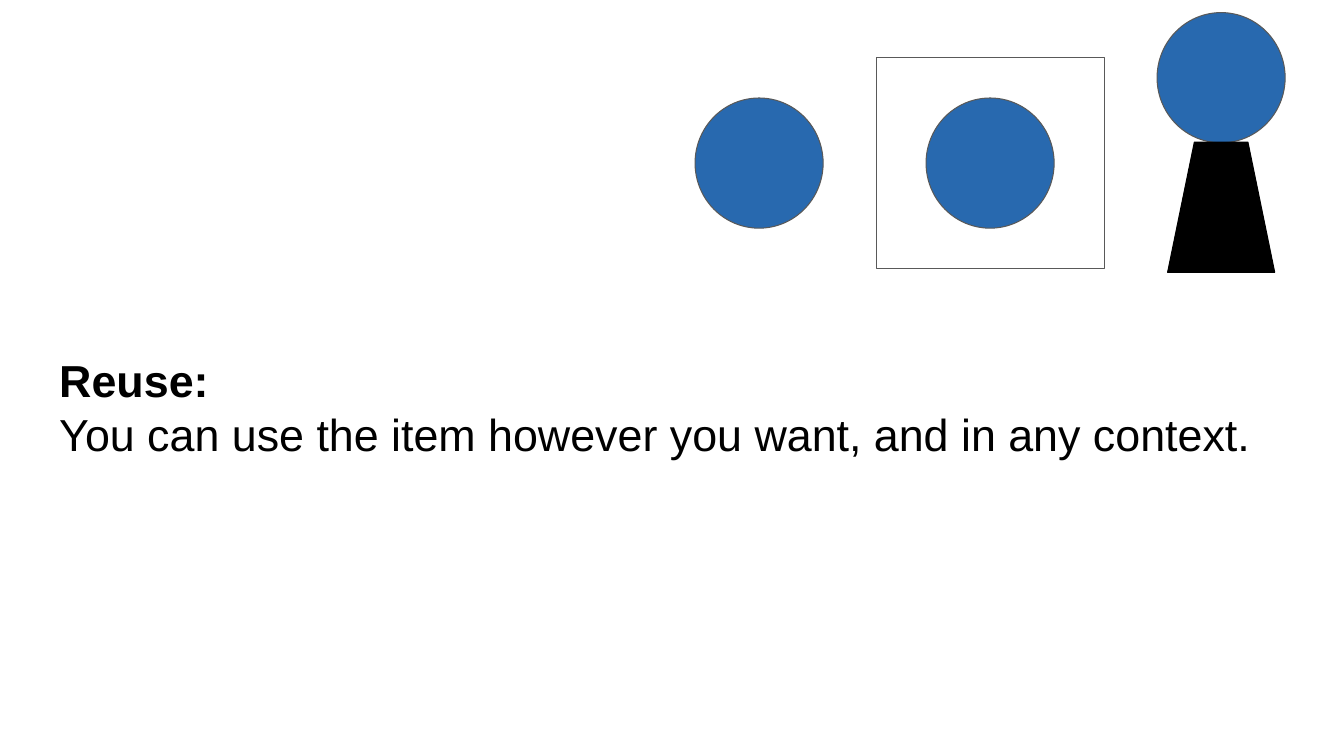
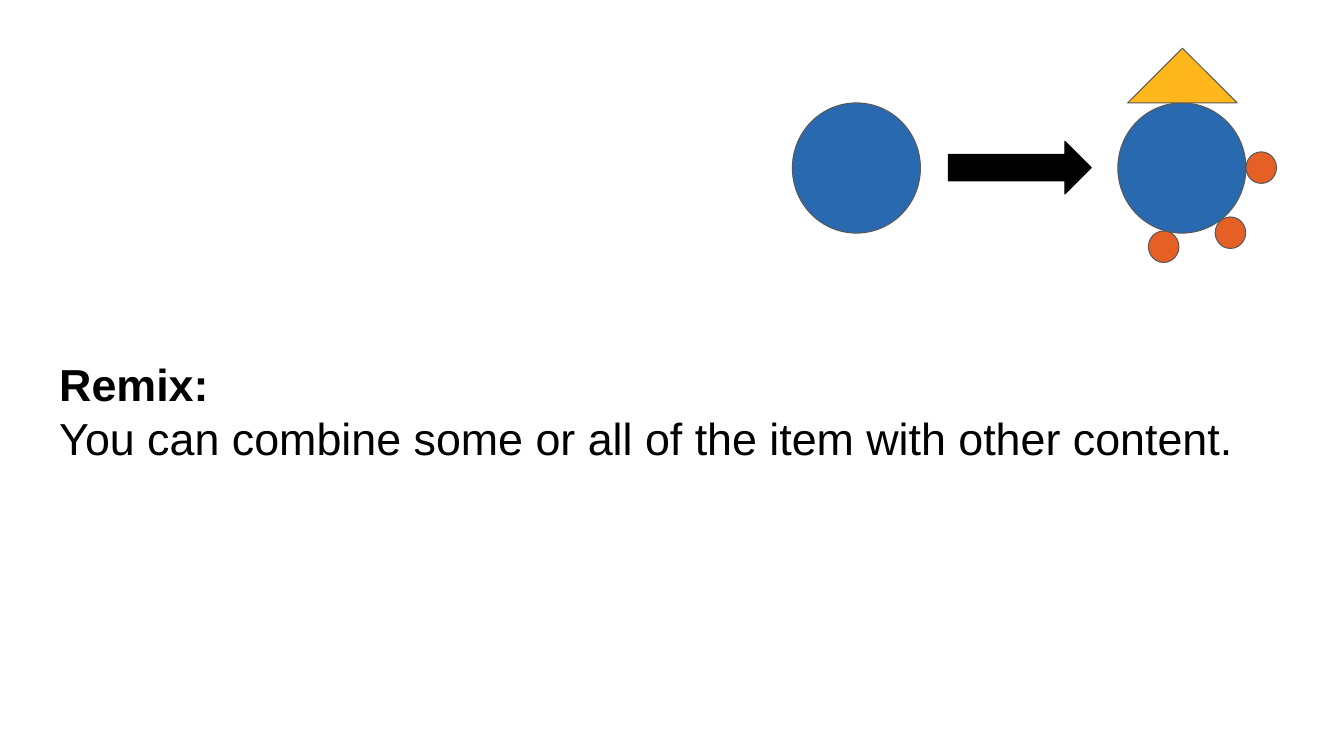
from pptx import Presentation
from pptx.dml.color import RGBColor
from pptx.enum.shapes import MSO_SHAPE
from pptx.enum.text import MSO_ANCHOR
from pptx.util import Pt

RECTANGLE = MSO_SHAPE.RECTANGLE
OVAL = MSO_SHAPE.OVAL
TRAPEZOID = MSO_SHAPE.TRAPEZOID
TRIANGLE = MSO_SHAPE.ISOSCELES_TRIANGLE
ARROW = MSO_SHAPE.RIGHT_ARROW
MIDDLE = MSO_ANCHOR.MIDDLE

COLORS = {
    "blue": "2869AF",
    "yellow": "FFB71B",
    "orange": "E65F24",
    "black": "000000",
    "outline": "595959",
}
FONT = "Arial"
ITEM_SIZE = (91.5, 93)
DOT_SIZE = (21.8, 22.5)


def add_text(page, lines, *, left, top, width, height, size, color, spacing, inset):
    """Add a text box from (text, bold) lines, with spacing around the block."""
    box = page.shapes.add_textbox(Pt(left), Pt(top), Pt(width), Pt(height))
    frame = box.text_frame
    frame.word_wrap = True
    frame.vertical_anchor = MIDDLE
    frame.margin_left = frame.margin_right = Pt(inset)
    frame.margin_top = frame.margin_bottom = Pt(inset)
    for index, (text, bold) in enumerate(lines):
        para = frame.add_paragraph() if index else frame.paragraphs[0]
        span = para.add_run()
        span.text = text
        span.font.name = FONT
        span.font.size = Pt(size)
        span.font.bold = bold
        span.font.color.rgb = RGBColor.from_string(COLORS[color])
    frame.paragraphs[0].space_before = Pt(spacing)
    frame.paragraphs[-1].space_after = Pt(spacing)


def add_figure(page, kind, left, top, size, fill=None, line="outline"):
    """Add an outlined preset shape; without a fill colour it stays open."""
    figure = page.shapes.add_shape(kind, Pt(left), Pt(top), Pt(size[0]), Pt(size[1]))
    figure.shadow.inherit = False
    if fill:
        figure.fill.solid()
        figure.fill.fore_color.rgb = RGBColor.from_string(COLORS[fill])
    else:
        figure.fill.background()
    figure.line.color.rgb = RGBColor.from_string(COLORS[line])
    figure.line.width = Pt(0.75)
    return figure


deck = Presentation()
deck.slide_width, deck.slide_height = Pt(960), Pt(540)

# Statement on each slide
statements = [
    ("Reuse:", "You can use the item however you want, and in any context.", 129),
    ("Remix:", "You can combine some or all of the item with other content.", 134.5),
]
pages = []
for heading, sentence, height in statements:
    page = deck.slides.add_slide(deck.slide_layouts[6])
    add_text(page, [(heading, True), (sentence, False)], left=32.7, top=226,
             width=894.5, height=height, size=32, color="black",
             spacing=13.3, inset=9.6)
    pages.append(page)
reuse, remix = pages

# Reuse: the item alone, in a frame and on a pedestal
add_figure(reuse, RECTANGLE, 626, 41, (163, 150.5))
for left, top in [(496.5, 70), (661.5, 70), (826.5, 9)]:
    add_figure(reuse, OVAL, left, top, ITEM_SIZE, "blue")
add_figure(reuse, TRAPEZOID, 834, 101.5, (76.5, 93), "black", "black")

# Remix: the item, an arrow, and the item again
for left in (566, 798.5):
    add_figure(remix, OVAL, left, 73.5, ITEM_SIZE, "blue")
add_figure(remix, ARROW, 677.5, 101, (102, 37.5), "black", "black")

# Remix: additions around the second item
add_figure(remix, TRIANGLE, 805.5, 34.5, (78.3, 39), "yellow")
for left, top in [(820.3, 165), (890, 108.5), (868, 155)]:
    add_figure(remix, OVAL, left, top, DOT_SIZE, "orange")

deck.save("out.pptx")
